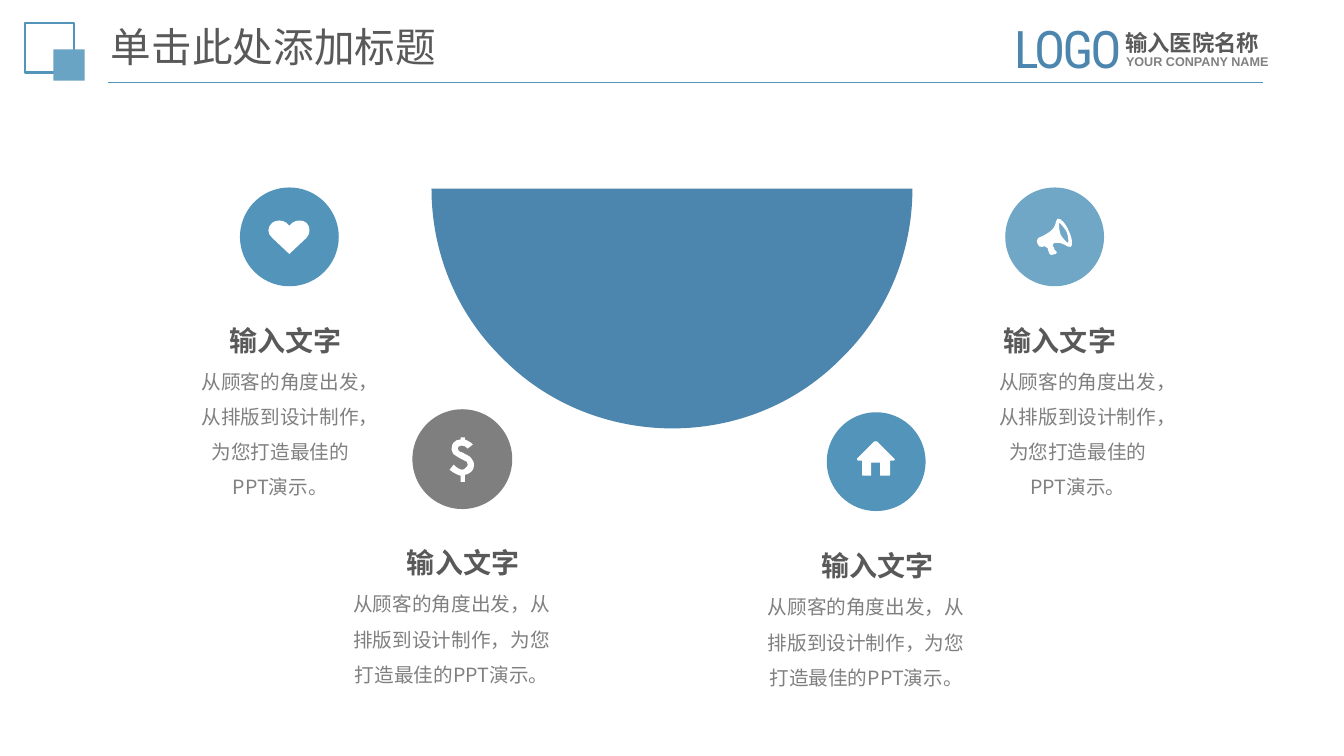
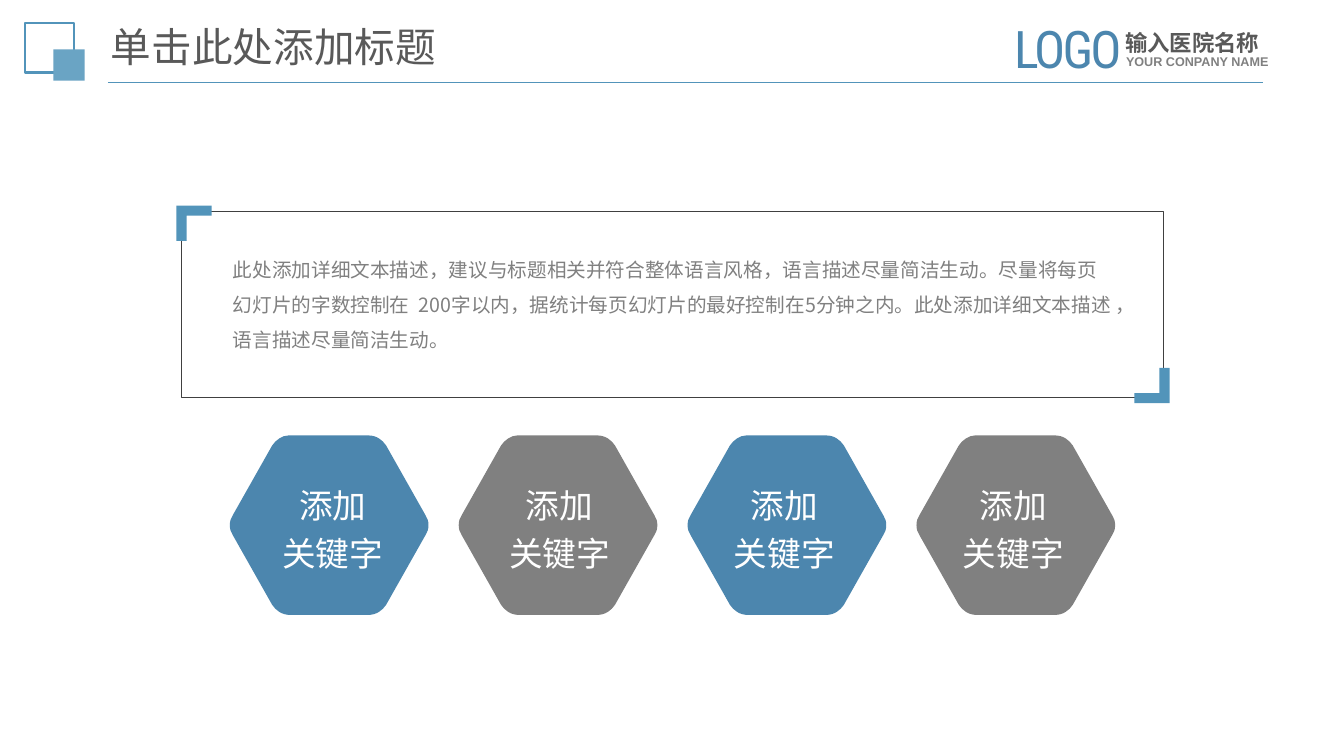
import pptx
import pptx.dml.color
import pptx.enum.lang
import pptx.enum.shapes
import pptx.enum.text
import pptx.oxml.ns
import pptx.util
from lxml import etree

RGBColor = pptx.dml.color.RGBColor
Shapes = pptx.enum.shapes.MSO_SHAPE
Align = pptx.enum.text.PP_ALIGN
Anchor = pptx.enum.text.MSO_ANCHOR
qn = pptx.oxml.ns.qn

PX = 9144  # 100 px to the inch
INSET = (10, 5)
NO_INSET = (0, 0)

BLUE = RGBColor(0x52, 0x94, 0xBA)
DEEP_BLUE = RGBColor(0x4C, 0x86, 0xAE)
SOFT_BLUE = RGBColor(0x6A, 0xA4, 0xC4)
PALE_BLUE = RGBColor(0x70, 0xA7, 0xC6)
DARK_GREY = RGBColor(0x59, 0x59, 0x59)
GREY = RGBColor(0x80, 0x80, 0x80)
DISC_GREY = RGBColor(0x7F, 0x7F, 0x7F)
FRAME_GREY = RGBColor(0x40, 0x40, 0x40)
WHITE = RGBColor(0xFF, 0xFF, 0xFF)

CJK_FONT = "Noto Sans CJK SC"
TITLE = "单击此处添加标题"
HEADING = "输入文字"
FEATURE_TEXT = "从顾客的角度出发，从排版到设计制作，为您打造最佳的PPT演示。"
DESCRIPTION = (
    "此处添加详细文本描述，建议与标题相关并符合整体语言风格，语言描述尽量简洁生动。"
    "尽量将每页幻灯片的字数控制在  200字以内，据统计每页幻灯片的最好控制在5分钟之内。"
    "此处添加详细文本描述 ，语言描述尽量简洁生动。"
)

# Outlines: each contour is a list of points (2 numbers) and Bezier curves (6 numbers)
HEART = [[
    (66, 35), (62, 32, 56, 32, 52, 35), (49, 38), (46, 35), (42, 32, 36, 32, 32, 35),
    (27, 39, 27, 46, 32, 50), (49, 66), (66, 50), (70, 46, 70, 39, 66, 35),
]]
DOLLAR = [[
    (60, 35), (55, 39), (53, 37, 51, 36, 49, 36), (48, 36, 47, 36, 46, 37),
    (45, 38, 45, 38, 45, 39), (45, 40, 45, 40, 46, 41), (47, 42, 48, 43, 50, 43),
    (53, 45, 56, 46, 57, 47), (58, 48, 59, 49, 60, 51), (61, 52, 61, 53, 61, 55),
    (61, 57, 61, 59, 60, 60), (59, 61, 58, 63, 57, 63), (56, 64, 54, 65, 52, 65),
    (52, 72), (48, 72), (48, 66), (46, 65, 44, 65, 43, 64), (41, 63, 39, 62, 37, 60),
    (41, 55), (44, 58, 47, 60, 50, 60), (51, 60, 52, 59, 53, 58),
    (54, 57, 55, 56, 55, 55), (55, 54, 54, 53, 54, 52), (53, 52, 52, 51, 50, 50),
    (46, 48, 44, 47, 43, 46), (41, 45, 40, 44, 40, 43), (39, 41, 39, 40, 39, 39),
    (39, 36, 40, 34, 41, 33), (43, 31, 45, 30, 48, 30), (48, 28), (52, 28), (52, 30),
    (54, 31, 55, 31, 56, 32), (57, 32, 58, 33, 60, 35),
]]
HOUSE = [[
    (67, 46), (50, 29), (49, 29, 48, 29, 47, 29), (30, 46), (30, 47, 30, 48, 31, 48),
    (35, 48), (35, 61), (35, 62, 35, 63, 36, 63), (44, 63), (44, 50), (53, 50),
    (53, 63), (62, 63), (63, 63, 63, 62, 63, 61), (63, 48), (66, 48),
    (68, 48, 68, 47, 67, 46),
]]
MEGAPHONE = [
    [
        (62, 55), (62, 55, 58, 52, 55, 47), (53, 41, 53, 35, 54, 35),
        (54, 35, 58, 39, 61, 44), (63, 50, 63, 55, 62, 55),
    ],
    [
        (63, 43), (60, 36, 55, 30, 52, 31), (48, 33, 55, 41, 33, 50),
        (31, 51, 31, 54, 32, 56), (33, 58, 35, 60, 37, 59), (39, 58),
        (40, 60, 41, 59, 42, 60), (42, 62, 44, 65, 44, 66), (45, 67, 46, 67, 46, 67),
        (50, 66), (51, 65, 52, 64, 51, 64), (51, 63, 50, 63, 49, 62),
        (49, 61, 48, 58, 47, 58), (47, 56, 48, 56, 49, 55), (59, 54, 61, 60, 65, 59),
        (67, 58, 67, 51, 63, 43),
    ],
]
HEXAGON = [[
    (155, 168), (153, 171, 151, 173, 148, 175), (145, 177, 141, 178, 138, 178),
    (59, 178), (56, 178, 52, 177, 49, 175), (46, 173, 44, 171, 42, 168), (3, 99),
    (1, 96, 0, 93, 0, 89), (0, 85, 1, 82, 3, 79), (42, 10), (44, 7, 46, 5, 49, 3),
    (52, 1, 55, 0, 58, 0), (138, 0), (141, 0, 145, 1, 148, 3),
    (151, 5, 153, 7, 155, 10), (194, 79), (196, 82, 197, 85, 197, 89),
    (197, 93, 196, 96, 194, 99),
]]
HALF_DISC = [[
    (239, 238), (300, 238, 361, 215, 407, 168), (454, 122, 477, 61, 477, 0), (0, 0),
    (0, 61, 23, 122, 70, 168), (116, 215, 178, 238, 239, 238),
]]
CORNER = [(0, 0), (35, 0), (35, 10), (10, 10), (10, 35), (0, 35)]


def emu(*lengths):
    return [pptx.util.Emu(length * PX) for length in lengths]


def paint(shape, fill=None, line=None, width=1):
    shape.shadow.inherit = False
    if fill is None:
        shape.fill.background()
    else:
        shape.fill.solid()
        shape.fill.fore_color.rgb = fill
    if line is None:
        shape.line.fill.background()
    else:
        shape.line.color.rgb = line
        shape.line.width = pptx.util.Pt(width)


def add_preset(page, kind, box, **style):
    paint(page.shapes.add_shape(kind, *emu(*box)), **style)


def bend(segment, controls):
    """Turn a straight segment into a Bezier curve with two control points."""
    segment.tag = qn("a:cubicBezTo")
    for index, (x, y) in enumerate(controls):
        point = etree.Element(qn("a:pt"), x=str(x), y=str(y))
        segment.insert(index, point)


def add_outline(page, contours, left, top, fill):
    builder = None
    for contour in contours:
        points = [emu(left + part[-2], top + part[-1]) for part in contour]
        if builder is None:
            builder = page.shapes.build_freeform(*points[0], scale=1.0)
        else:
            builder.move_to(*points[0])
        builder.add_line_segments(points[1:], close=True)
    shape = builder.convert_to_shape()
    paint(shape, fill=fill)
    # Curves are measured from the corner of the finished shape
    segments = list(shape._element.iter(qn("a:lnTo")))
    parts = [part for contour in contours for part in contour[1:]]
    for segment, part in zip(segments, parts):
        if len(part) == 6:
            bend(segment, [
                ((left + x) * PX - shape.left, (top + y) * PX - shape.top)
                for x, y in (part[:2], part[2:4])
            ])


def write(shape, text, size, color, font=CJK_FONT, bold=False, align=Align.LEFT,
          spacing=1.0, inset=INSET, anchor=Anchor.TOP, wrap=True, tracking=None):
    frame = shape.text_frame
    frame.text = text
    frame.word_wrap = wrap
    frame.auto_size = pptx.enum.text.MSO_AUTO_SIZE.NONE
    frame.vertical_anchor = anchor
    frame.margin_left, frame.margin_top = emu(*inset)
    frame.margin_right, frame.margin_bottom = emu(*inset)
    for para in frame.paragraphs:
        para.alignment = align
        para.line_spacing = spacing
        for span in para.runs:
            span.font.size = pptx.util.Pt(size)
            span.font.bold = bold
            span.font.color.rgb = color
            span.font.name = font
            span.font.language_id = pptx.enum.lang.MSO_LANGUAGE_ID.SIMPLIFIED_CHINESE
            # East Asian typeface and letter spacing
            properties = span.font._element
            etree.SubElement(properties, qn("a:ea"), typeface=CJK_FONT)
            if tracking is not None:
                properties.set("spc", str(tracking))


def add_text(page, box, text, size, color, **style):
    write(page.shapes.add_textbox(*emu(*box)), text, size, color, **style)


def add_header(page):
    # Title and rule
    title = page.shapes.title
    title.left, title.top, title.width, title.height = emu(100, 25, 860, 48)
    write(title, TITLE, 29, DARK_GREY, spacing=0.9, anchor=Anchor.MIDDLE)
    rule = page.shapes.add_connector(
        pptx.enum.shapes.MSO_CONNECTOR.STRAIGHT, *emu(107, 82, 1253, 82))
    rule.line.color.rgb = BLUE
    rule.line.width = pptx.util.Pt(1.25)
    etree.SubElement(rule._element.spPr, qn("a:effectLst"))
    # Paired squares
    add_preset(page, Shapes.RECTANGLE, (25, 23, 48, 49), line=BLUE, width=1.5)
    add_preset(page, Shapes.RECTANGLE, (53, 49, 31, 31), fill=SOFT_BLUE)
    # Name of the hospital
    add_text(page, (1106, 24, 175, 37), "输入医院名称", 16, DARK_GREY,
             font="Calibri", bold=True)
    add_text(page, (1107, 49, 193, 25), "YOUR CONPANY NAME", 9, GREY,
             font="Arial", bold=True)
    add_text(page, (996, 12, 141, 72), "LOGO", 37, DEEP_BLUE,
             font="Roboto Condensed", tracking=-200)


def add_feature(page, left, top, icon, color, heading_shift, body_box, diameter=98):
    add_preset(page, Shapes.OVAL, (left, top, diameter, diameter), fill=color)
    add_outline(page, icon, left, top, WHITE)
    heading_x, heading_y = heading_shift
    add_text(page, (left + heading_x, top + heading_y, 112, 40), HEADING, 20,
             DARK_GREY, font="Arial", bold=True, align=Align.RIGHT, spacing=1.2,
             inset=NO_INSET, wrap=False)
    body_x, body_y, width, height = body_box
    add_text(page, (left + body_x, top + body_y, width, height), FEATURE_TEXT, 14,
             GREY, align=Align.CENTER, spacing=1.5)


def add_framed_text(page, left, top, width, height):
    add_preset(page, Shapes.RECTANGLE, (left, top, width, height),
               line=FRAME_GREY, width=0.25)
    add_text(page, (left + 51, top + 35, 876, 102), DESCRIPTION, 14, GREY,
             spacing=1.5, inset=NO_INSET)
    # Opposite corner marks, the second turned by half a circle
    add_outline(page, [CORNER], left - 5, top - 5, BLUE)
    turned = [(-x, -y) for x, y in CORNER]
    add_outline(page, [turned], left + width + 6, top + height + 6, BLUE)


def add_keyword(page, left, top, color, label_shift):
    add_outline(page, HEXAGON, left, top, color)
    add_text(page, (left + label_shift, top + 41, 130, 93), "添加\n关键字", 24, WHITE,
             align=Align.CENTER, spacing=1.2, inset=NO_INSET)


def build_features(page):
    add_header(page)
    add_outline(page, HALF_DISC, 428, 187, DEEP_BLUE)
    lower_body = (-78, 165, 234, 116)
    add_feature(page, 238, 186, HEART, BLUE, (-11, 128), (-54, 164, 188, 151))
    add_feature(page, 409, 406, DOLLAR, DISC_GREY, (-6, 129), lower_body, diameter=99)
    add_feature(page, 820, 409, HOUSE, BLUE, (-6, 129), lower_body)
    add_feature(page, 997, 186, MEGAPHONE, PALE_BLUE, (-2, 128), (-20, 164, 184, 151))


def build_keywords(page):
    add_header(page)
    add_framed_text(page, 180, 209, 974, 185)
    for index, label_shift in enumerate((37, 35, 31, 31)):
        color = GREY if index % 2 else DEEP_BLUE
        add_keyword(page, 228 + 227 * index, 432, color, label_shift)


def main():
    deck = pptx.Presentation()
    deck.slide_width, deck.slide_height = emu(1333, 750)
    title_only = deck.slide_layouts[5]
    for build in (build_features, build_keywords):
        build(deck.slides.add_slide(title_only))
    deck.save("out.pptx")


if __name__ == "__main__":
    main()
